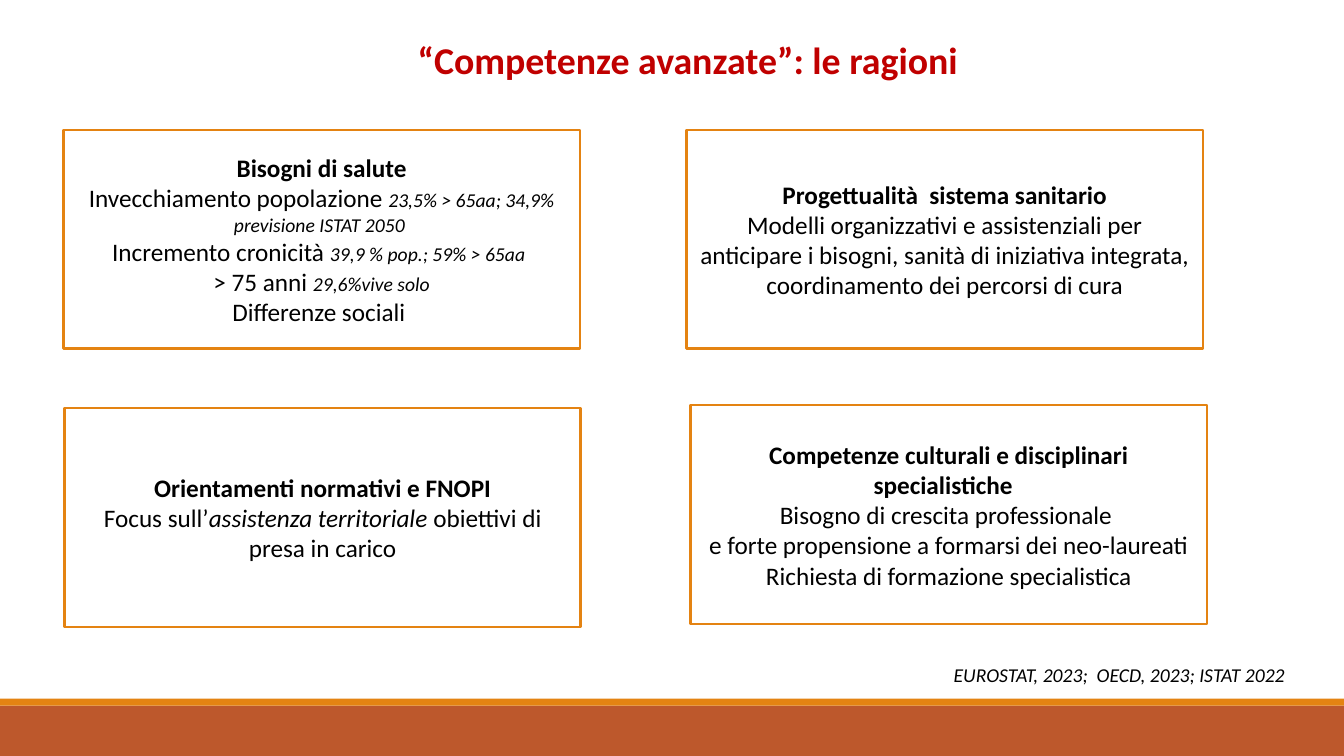
from pptx import Presentation
from pptx.dml.color import RGBColor
from pptx.enum.shapes import MSO_SHAPE as Shape
from pptx.enum.text import MSO_ANCHOR as Anchor, PP_ALIGN as Align
from pptx.util import Inches, Pt

ORANGE, RUST, RED, BLACK, WHITE = "E48312", "BD582C", "C00000", "000000", "FFFFFF"
CARD_WIDTH, CARD_HEIGHT = 38.41, 28.93

CARDS = [
    (4.73, 17.2, "Bisogni di salute", [
        [("Invecchiamento popolazione ", ""),
         ("23,5% > 65aa; 34,9% previsione ISTAT 2050 ", "note")],
        [("Incremento cronicità ", ""), ("39,9 % pop.; 59% > 65aa", "note"), (" ", "")],
        [("> 75 anni ", ""), ("29,6%vive solo", "note")],
        [("Differenze sociali ", "")],
    ]),
    (51.09, 17.2, "Progettualità  sistema sanitario", [
        [("Modelli organizzativi e assistenziali per anticipare i bisogni, sanità di "
          "iniziativa integrata, coordinamento dei percorsi di cura", "")],
    ]),
    (51.39, 53.6, "Competenze culturali e disciplinari specialistiche  ", [
        [("Bisogno di crescita professionale ", "")],
        [("e forte propensione a formarsi dei neo-laureati", "")],
        [("Richiesta di formazione specialistica", "")],
    ]),
    (4.8, 54, "Orientamenti normativi e FNOPI", [
        [("Focus sull’", ""), ("assistenza territoriale ", "italic"),
         ("obiettivi di presa in carico", "")],
    ]),
]


def color(value):
    return RGBColor.from_string(value)


class SlideBuilder:
    """Draws styled elements on one slide, placed in percent of its size."""

    def __init__(self, presentation):
        self.presentation = presentation
        self.slide = presentation.slides.add_slide(presentation.slide_layouts[5])
        self.font_name = "Calibri"

    def box(self, left, top, width, height):
        across = self.presentation.slide_width / 100
        down = self.presentation.slide_height / 100
        return [round(length) for length in
                (left * across, top * down, width * across, height * down)]

    def style(self, paragraph, size=18, hue=BLACK, bold=False, italic=False,
              align=Align.CENTER):
        paragraph.alignment = align
        font = paragraph.font
        font.name, font.size, font.bold, font.italic = self.font_name, Pt(size), bold, italic
        font.color.rgb = color(hue)

    def inset(self, frame, anchor):
        frame.word_wrap = True
        frame.vertical_anchor = anchor
        frame.margin_left = frame.margin_right = Inches(0.13)
        frame.margin_top = frame.margin_bottom = Inches(0.07)

    def rectangle(self, place, fill, line=None):
        shape = self.slide.shapes.add_shape(Shape.RECTANGLE, *self.box(*place))
        shape.shadow.inherit = False
        shape.fill.solid()
        shape.fill.fore_color.rgb = color(fill)
        if line:
            shape.line.color.rgb = color(line)
            shape.line.width = Pt(1.75)
        else:
            shape.line.fill.background()
        return shape

    def title(self, text, place):
        shape = self.slide.shapes.title
        shape.left, shape.top, shape.width, shape.height = self.box(*place)
        self.inset(shape.text_frame, Anchor.TOP)
        shape.text_frame.text = text
        self.style(shape.text_frame.paragraphs[0], 27, RED, bold=True)

    def card(self, left, top, heading, lines):
        shape = self.rectangle((left, top, CARD_WIDTH, CARD_HEIGHT), WHITE, ORANGE)
        frame = shape.text_frame
        self.inset(frame, Anchor.MIDDLE)
        frame.text = heading
        self.style(frame.paragraphs[0], bold=True)
        for line in lines:
            paragraph = frame.add_paragraph()
            self.style(paragraph)
            for text, kind in line:
                run = paragraph.add_run()
                run.text = text
                if kind:
                    run.font.italic = True
                if kind == "note":
                    run.font.size = Pt(14)

    def source(self, text, place):
        frame = self.slide.shapes.add_textbox(*self.box(*place)).text_frame
        frame.word_wrap = False
        frame.text = text
        self.style(frame.paragraphs[0], 14, italic=True, align=Align.LEFT)


def main():
    presentation = Presentation()
    presentation.slide_width, presentation.slide_height = Inches(13.33), Inches(7.5)
    builder = SlideBuilder(presentation)
    builder.rectangle((0, 93.33, 100, 6.67), RUST)
    builder.rectangle((0, 92.4, 100, 0.93), ORANGE)
    for card in CARDS:
        builder.card(*card)
    builder.title("“Competenze avanzate”: le ragioni", (6.68, 3.87, 88.97, 7.87))
    builder.source("EUROSTAT, 2023;  OECD, 2023; ISTAT 2022", (70.22, 87.07, 27.61, 4.53))
    presentation.save("out.pptx")


if __name__ == "__main__":
    main()
